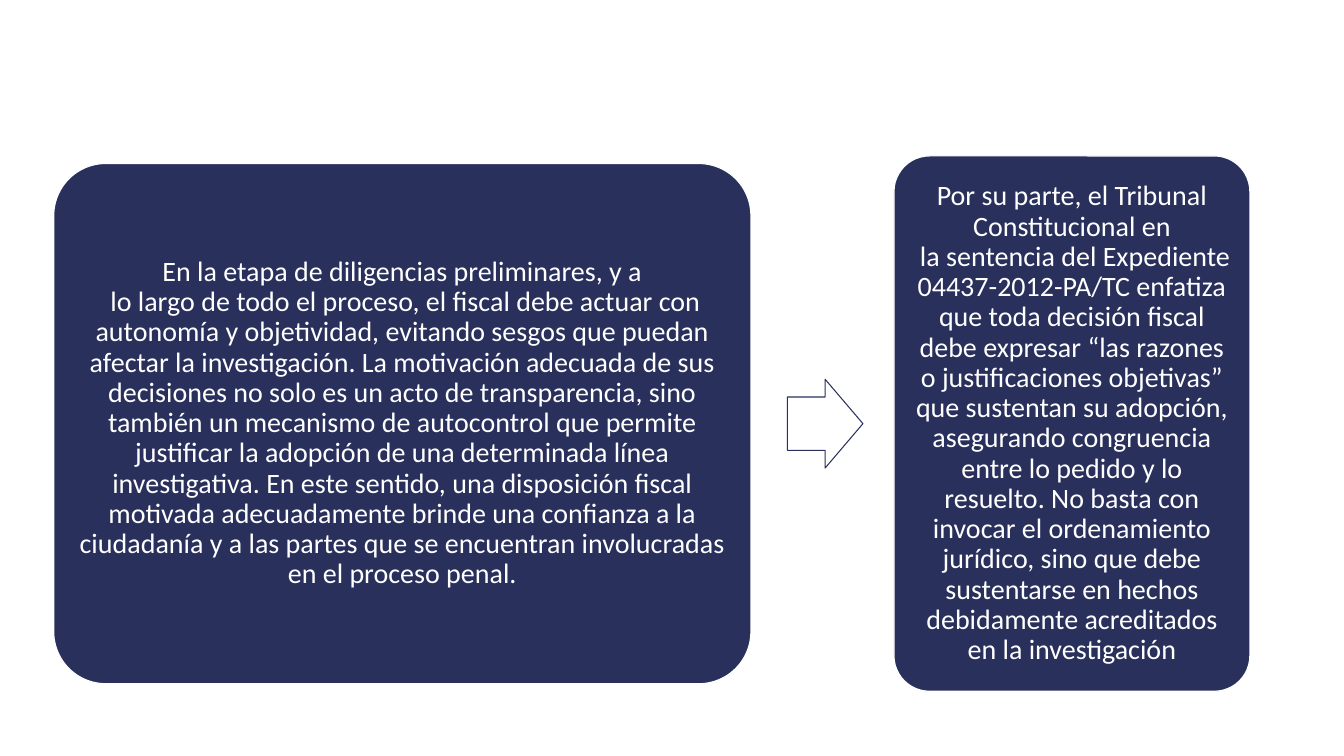
"""Build a slide where the prosecutor's duty leads to the Constitutional Court's criterion."""
from dataclasses import dataclass

from pptx import Presentation
from pptx.dml.color import RGBColor
from pptx.enum.shapes import MSO_SHAPE as SHAPE
from pptx.enum.text import MSO_ANCHOR as ANCHOR, PP_ALIGN as ALIGN
from pptx.util import Pt


@dataclass(frozen=True)
class Theme:
    navy: RGBColor = RGBColor.from_string("29305C")
    white: RGBColor = RGBColor.from_string("FFFFFF")
    font: str = "Calibri"
    body: Pt = Pt(20)


theme = Theme()
MIDDLE = 302.6

DUTY = (
    "En la etapa de diligencias preliminares, y a\n"
    " lo largo de todo el proceso, el fiscal debe actuar con autonomía y objetividad, "
    "evitando sesgos que puedan afectar la investigación. La motivación adecuada de sus "
    "decisiones no solo es un acto de transparencia, sino también un mecanismo de "
    "autocontrol que permite justificar la adopción de una determinada línea "
    "investigativa. En este sentido, una disposición fiscal motivada adecuadamente "
    "brinde una confianza a la ciudadanía y a las partes que se encuentran involucradas "
    "en el proceso penal."
)
CRITERION = (
    "Por su parte, el Tribunal Constitucional en\n"
    " la sentencia del Expediente 04437-2012-PA/TC enfatiza que toda decisión fiscal "
    "debe expresar “las razones o justificaciones objetivas” que sustentan su adopción, "
    "asegurando congruencia entre lo pedido y lo resuelto. No basta con invocar el "
    "ordenamiento jurídico, sino que debe sustentarse en hechos debidamente acreditados "
    "en la investigación"
)

prs = Presentation()
prs.slide_width, prs.slide_height = Pt(960), Pt(540)
slide = prs.slides.add_slide(prs.slide_layouts[6])


def add_centred(kind, left, width, height, fill, line, line_width):
    """Add a preset shape centred on the common horizontal axis."""
    sp = slide.shapes.add_shape(
        kind, Pt(left), Pt(MIDDLE - height / 2), Pt(width), Pt(height)
    )
    sp.shadow.inherit = False
    sp.fill.solid()
    sp.fill.fore_color.rgb = fill
    sp.line.color.rgb = line
    sp.line.width = Pt(line_width)
    return sp


for left, width, height, text in (
    (38.4, 498, 371.6, DUTY),
    (638.6, 254.2, 382.4, CRITERION),
):
    sp = add_centred(
        SHAPE.ROUNDED_RECTANGLE, left, width, height, theme.navy, theme.white, 0.85
    )
    sp.adjustments[0] = 0.1
    tf = sp.text_frame
    tf.word_wrap = True
    tf.vertical_anchor = ANCHOR.MIDDLE
    tf.margin_left = tf.margin_right = tf.margin_top = tf.margin_bottom = Pt(6)
    p = tf.paragraphs[0]
    p.text = text
    p.alignment = ALIGN.CENTER
    p.line_spacing = 0.9
    for r in p.runs:
        r.font.name = theme.font
        r.font.size = theme.body
        r.font.color.rgb = theme.white

arrow = add_centred(SHAPE.RIGHT_ARROW, 562.4, 54, 63.4, theme.white, theme.navy, 0.75)
arrow.adjustments[0] = 0.6
arrow.adjustments[1] = 0.5

prs.save("out.pptx")
